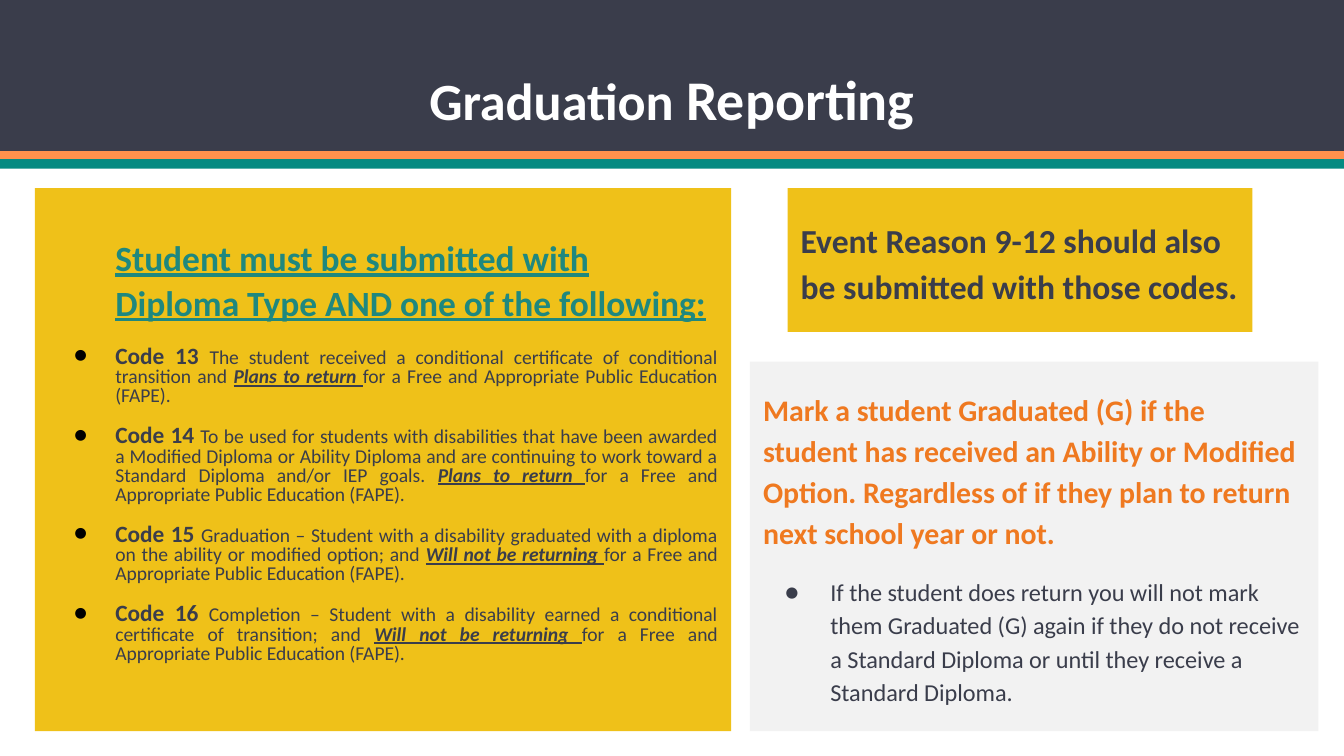
from lxml import etree
from pptx import Presentation
from pptx.dml.color import RGBColor
from pptx.enum.shapes import MSO_SHAPE
from pptx.enum.text import MSO_ANCHOR, PP_ALIGN
from pptx.oxml.ns import qn
from pptx.util import Inches, Pt

RECT = MSO_SHAPE.RECTANGLE
TOP, MIDDLE = MSO_ANCHOR.TOP, MSO_ANCHOR.MIDDLE
LEFT, CENTER, JUSTIFY = PP_ALIGN.LEFT, PP_ALIGN.CENTER, PP_ALIGN.JUSTIFY

WHITE = RGBColor(0xFF, 0xFF, 0xFF)
BLACK = RGBColor(0x00, 0x00, 0x00)
NAVY = RGBColor(0x3A, 0x3D, 0x4B)
PEACH = RGBColor(0xFF, 0x91, 0x4D)
TEAL = RGBColor(0x04, 0x8A, 0x81)
YELLOW = RGBColor(0xEF, 0xC1, 0x19)
GREEN = RGBColor(0x1F, 0x88, 0x7E)
GRAY = RGBColor(0xF2, 0xF2, 0xF2)
ORANGE = RGBColor(0xEF, 0x79, 0x20)

FONT = "Calibri"
WIDTH = 10
HEIGHT = WIDTH * 9 / 16
PANEL_TOP, PANEL_BOTTOM = 1.4, 5.44
FAPE = "for a Free and Appropriate Public Education (FAPE)."
CODES = [
    ("Code 13 ", "The student received a conditional certificate of conditional "
     "transition and ", "Plans to return "),
    ("Code 14 ", "To be used for students with disabilities that have been awarded "
     "a Modified Diploma or Ability Diploma and are continuing to work toward a "
     "Standard Diploma and/or IEP goals. ", "Plans to return "),
    ("Code 15 ", "Graduation – Student with a disability graduated with a diploma on "
     "the ability or modified option; and ", "Will not be returning "),
    ("Code 16 ", "Completion – Student with a disability earned a conditional "
     "certificate of transition; and ", "Will not be returning "),
]


def add_rect(slide, box, color):
    sp = slide.shapes.add_shape(RECT, *map(Inches, box))
    sp.shadow.inherit = False
    sp.fill.solid()
    sp.fill.fore_color.rgb = color
    sp.line.fill.background()
    return sp


def add_panel(slide, box, color, bottom_inset=0.1):
    """Add a filled text panel and return its text frame."""
    tf = add_rect(slide, box, color).text_frame
    tf.word_wrap = True
    tf.vertical_anchor = MIDDLE
    tf.margin_left = tf.margin_right = tf.margin_top = Inches(0.1)
    tf.margin_bottom = Inches(bottom_inset)
    return tf


def add_run(p, text, size, color, bold=False, italic=False, underline=False):
    r = p.add_run()
    r.text = text
    font = r.font
    font.name, font.size, font.color.rgb = FONT, Pt(size), color
    font.bold, font.italic, font.underline = bold, italic, underline


def format_paragraph(p, spacing, before=0, after=0, align=LEFT):
    p.alignment = align
    p.line_spacing = spacing
    p.space_before, p.space_after = Pt(before), Pt(after)


def set_indent(p, left, first=0, bullet_color=None):
    """Indent a paragraph, with a round bullet if a colour is given."""
    pPr = p._p.get_or_add_pPr()
    pPr.set("marL", str(Inches(left)))
    pPr.set("indent", str(Inches(first)))
    if bullet_color is not None:
        clr = etree.SubElement(pPr, qn("a:buClr"))
        etree.SubElement(clr, qn("a:srgbClr")).set("val", str(bullet_color))
        etree.SubElement(pPr, qn("a:buFont")).set("typeface", FONT)
        etree.SubElement(pPr, qn("a:buChar")).set("char", "●")


def add_header(slide, height):
    stripe = 0.07
    add_rect(slide, (0, 0, WIDTH, height), NAVY)
    add_rect(slide, (0, height, WIDTH, stripe), PEACH)
    add_rect(slide, (0, height + 0.06, WIDTH, stripe), TEAL)

    title = slide.shapes.title
    title.left, title.top = Inches(1.06), Inches(0.5)
    title.width, title.height = Inches(WIDTH - 2 * 1.06), Inches(0.85)
    tf = title.text_frame
    tf.vertical_anchor = TOP
    tf.margin_left = tf.margin_right = Inches(0.07)
    tf.margin_top = tf.margin_bottom = Inches(0.04)
    p = tf.paragraphs[0]
    format_paragraph(p, 0.9, align=CENTER)
    add_run(p, "Graduation", 28, WHITE, bold=True)
    add_run(p, " Reporting", 30, WHITE, bold=True)
    # Keep the title in front of the header bands
    slide.shapes._spTree.append(title._element)


def add_codes(slide, box):
    tf = add_panel(slide, box, YELLOW, bottom_inset=0.26)
    p = tf.paragraphs[0]
    format_paragraph(p, 1.05, before=12, after=2)
    set_indent(p, 0.5)
    add_run(p, "Student must be submitted with Diploma Type AND one of the following:",
            19, GREEN, bold=True, underline=True)
    for code, meaning, plan in CODES:
        p = tf.add_paragraph()
        format_paragraph(p, 0.8, before=10.5, align=JUSTIFY)
        set_indent(p, 0.5, -0.31, BLACK)
        add_run(p, code, 12.5, NAVY, bold=True)
        add_run(p, meaning, 10.5, NAVY)
        add_run(p, plan, 10.5, NAVY, bold=True, italic=True, underline=True)
        add_run(p, FAPE, 10.5, NAVY)


def add_event_reason(slide, box):
    p = add_panel(slide, box, YELLOW).paragraphs[0]
    format_paragraph(p, 1.15, after=12)
    add_run(p, "Event Reason 9-12 should also be submitted with those codes.",
            18, NAVY, bold=True)


def add_graduated_rule(slide, box):
    tf = add_panel(slide, box, GRAY)
    p = tf.paragraphs[0]
    format_paragraph(p, 1.15)
    add_run(p, "Mark a student Graduated (G) if the student has received an Ability or "
            "Modified Option. Regardless of if they plan to return next school year "
            "or not.", 16, ORANGE, bold=True)
    p = tf.add_paragraph()
    format_paragraph(p, 1.15, before=12)
    set_indent(p, 0.5, -0.34, NAVY)
    add_run(p, "If the student does return you will not mark them Graduated (G) again "
            "if they do not receive a Standard Diploma or until they receive a "
            "Standard Diploma.", 13, NAVY)


def main():
    prs = Presentation()
    prs.slide_width, prs.slide_height = Inches(WIDTH), Inches(HEIGHT)
    slide = prs.slides.add_slide(prs.slide_layouts[5])
    add_header(slide, HEIGHT * 0.2)
    add_codes(slide, (0.26, PANEL_TOP, 5.18, PANEL_BOTTOM - PANEL_TOP))
    add_event_reason(slide, (5.86, PANEL_TOP, 3.46, 1.07))
    add_graduated_rule(slide, (5.58, 2.69, 4.23, PANEL_BOTTOM - 2.69))
    prs.save("out.pptx")


if __name__ == "__main__":
    main()
